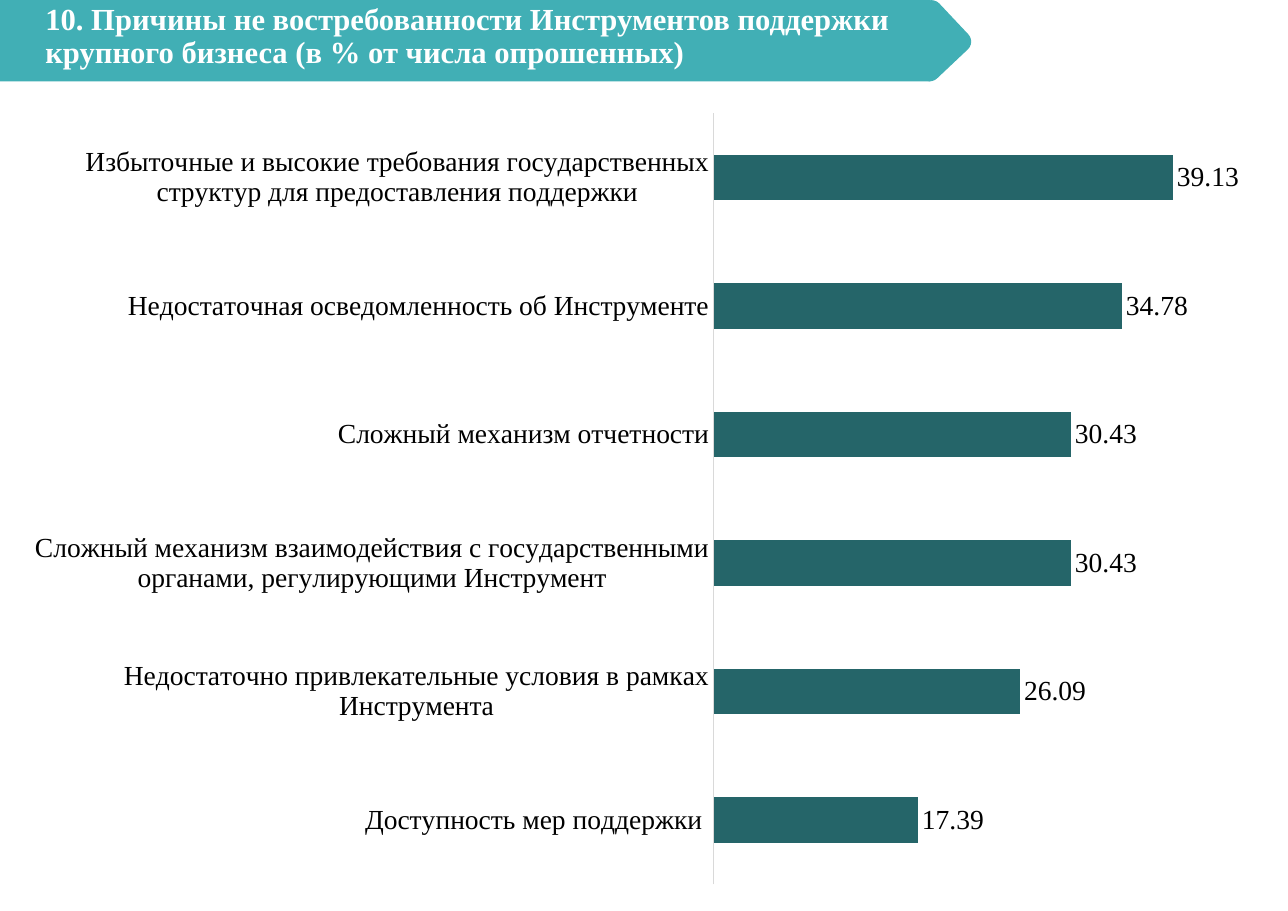
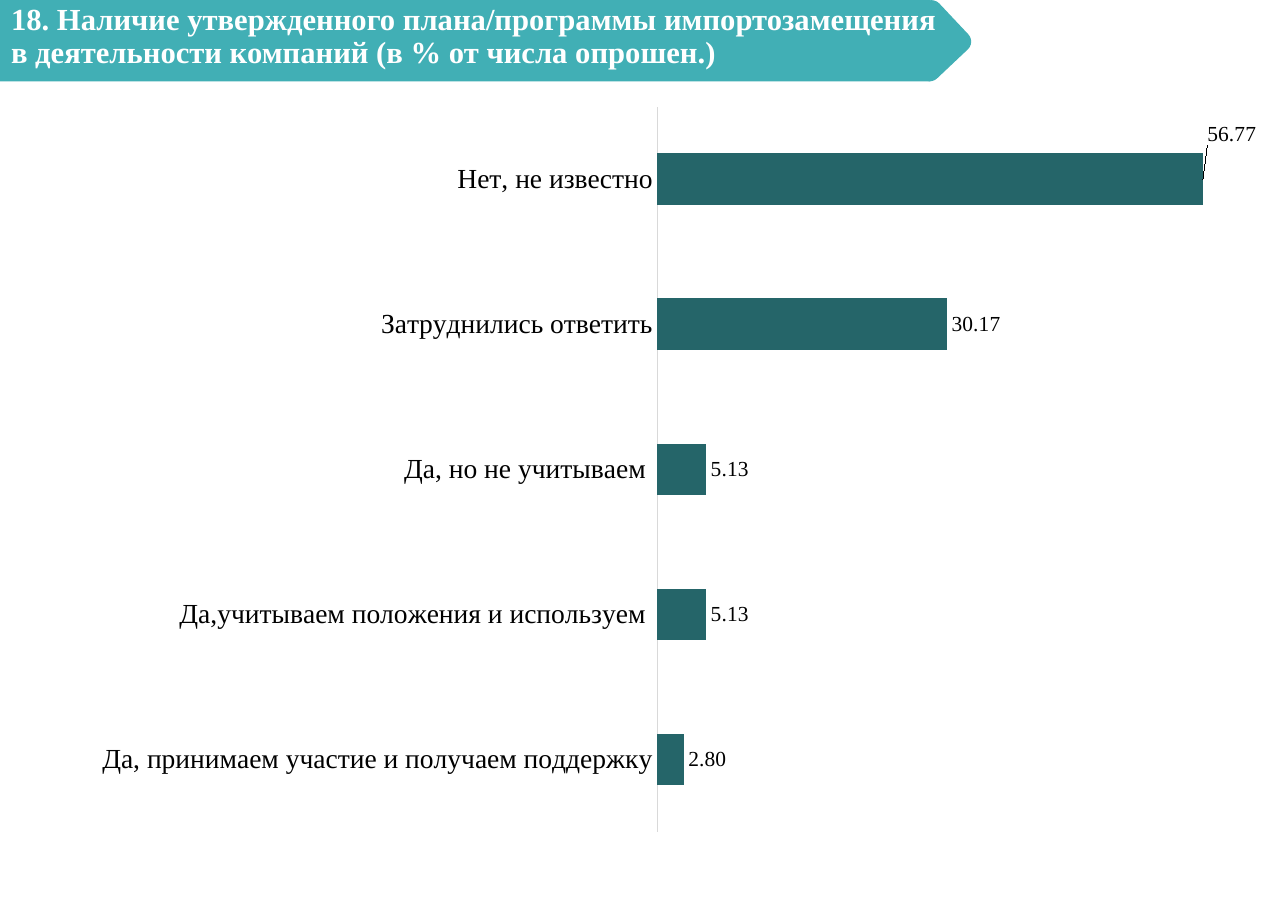
from lxml.etree import SubElement
from pptx import Presentation
from pptx.chart.data import CategoryChartData
from pptx.dml.color import RGBColor
from pptx.enum.chart import XL_CHART_TYPE, XL_LABEL_POSITION, XL_TICK_MARK
from pptx.enum.shapes import MSO_SHAPE
from pptx.enum.text import MSO_ANCHOR, MSO_AUTO_SIZE, PP_ALIGN
from pptx.oxml import parse_xml
from pptx.oxml.ns import nsdecls, qn
from pptx.util import Cm, Pt

BANNER_COLOR = "41AFB5"
BAR_COLOR = "256569"
AXIS_COLOR = "D9D9D9"
TEXT_COLOR = "000000"
TITLE_COLOR = "FFFFFF"
FONT_NAME = "Times New Roman"
PLOT_MARGIN = 0.02

TITLE_FRAME = {"word_wrap": True, "auto_size": MSO_AUTO_SIZE.NONE, "vertical_anchor": MSO_ANCHOR.MIDDLE}
TITLE_PARAGRAPH = {"alignment": PP_ALIGN.LEFT, "line_spacing": 0.9}
CATEGORY_AXIS = {
    "major_tick_mark": XL_TICK_MARK.NONE,
    "minor_tick_mark": XL_TICK_MARK.NONE,
    "has_major_gridlines": False,
}
VALUE_AXIS = {"visible": False, "has_major_gridlines": False, "minimum_scale": 0}
DATA_LABELS = {
    "show_value": True,
    "position": XL_LABEL_POSITION.OUTSIDE_END,
    "number_format": "0.00",
    "number_format_is_linked": False,
}

SURVEY_SLIDES = [
    {
        "title": ["10. Причины не востребованности Инструментов поддержки крупного бизнеса (в % от числа опрошенных)"],
        "title_box": (0.79, 0, 21.46, 1.73),
        "chart_box": (0.23, 2.24, 28.98, 18.52),
        "plot_left": 0.56,
        "maximum": 45,
        "label_size": 18,
        "label_shifts": {},
        "answers": {
            "Доступность мер поддержки ": 17.39,
            "Недостаточно привлекательные условия в рамках Инструмента": 26.09,
            "Сложный механизм взаимодействия с государственными органами, регулирующими Инструмент": 30.43,
            "Сложный механизм отчетности": 30.43,
            "Недостаточная осведомленность об Инструменте": 34.78,
            "Избыточные и высокие требования государственных структур для предоставления поддержки": 39.13,
        },
    },
    {
        "title": [
            "18. Наличие утвержденного плана/программы импортозамещения",
            "в деятельности компаний (в % от числа опрошен.)",
        ],
        "title_box": (0, 0, 25.65, 1.73),
        "chart_box": (1.85, 2.11, 27.15, 17.42),
        "plot_left": 0.49,
        "maximum": 60,
        "label_size": 14,
        "label_shifts": {4: -0.06},
        "answers": {
            "Да, принимаем участие и получаем поддержку": 2.8,
            "Да,учитываем положения и используем ": 5.13,
            "Да, но не учитываем ": 5.13,
            "Затруднились ответить": 30.17,
            "Нет, не известно": 56.77,
        },
    },
]


def color(hex_string):
    return RGBColor.from_string(hex_string)


def apply_format(target, values):
    for name, value in values.items():
        setattr(target, name, value)


def format_font(font, size, hex_string=TEXT_COLOR, bold=False):
    apply_format(font, {"name": FONT_NAME, "size": Pt(size), "bold": bold})
    font.color.rgb = color(hex_string)


def add_banner(slide, layout, box):
    left, top, width, height = box
    tip_side = height * 0.78
    tip_left = left + width - tip_side / 2
    tip_top = top + (height - tip_side) / 2
    group = slide.shapes.add_group_shape()
    parts = [
        (MSO_SHAPE.RECTANGLE, box, 0),
        (MSO_SHAPE.ROUNDED_RECTANGLE, (tip_left, tip_top, tip_side, tip_side), 46.7),
    ]
    for preset, part_box, rotation in parts:
        shape = group.shapes.add_shape(preset, *map(Cm, part_box))
        shape.rotation = rotation
        shape.shadow.inherit = False
        shape.fill.solid()
        shape.fill.fore_color.rgb = color(BANNER_COLOR)
        shape.line.fill.background()
    for number, properties in enumerate(group.element.iter(qn("p:cNvPr")), 101):
        properties.set("id", str(number))
    layout.placeholders[0].element.getparent().insert(2, group.element)


def place_title(slide, lines, box):
    title = slide.shapes.title
    apply_format(title, dict(zip(("left", "top", "width", "height"), map(Cm, box))))
    apply_format(title.text_frame, TITLE_FRAME)
    paragraph = title.text_frame.paragraphs[0]
    apply_format(paragraph, TITLE_PARAGRAPH)
    for index, line in enumerate(lines):
        if index:
            paragraph.add_line_break()
        run = paragraph.add_run()
        run.text = line
        format_font(run.font, 20, TITLE_COLOR, True)


def set_plot_layout(chart, plot_left):
    plot_area = chart.element.find(".//" + qn("c:plotArea"))
    for old_layout in plot_area.findall(qn("c:layout")):
        plot_area.remove(old_layout)
    layout = parse_xml(f"<c:layout {nsdecls('c')}><c:manualLayout/></c:layout>")
    values = {
        "layoutTarget": "inner",
        "xMode": "edge",
        "yMode": "edge",
        "x": plot_left,
        "y": PLOT_MARGIN,
        "w": round(1 - PLOT_MARGIN - plot_left, 2),
        "h": 1 - 2 * PLOT_MARGIN,
    }
    for name, value in values.items():
        SubElement(layout[0], qn(f"c:{name}")).set("val", str(value))
    plot_area.insert(0, layout)


def shift_label(chart, series, index, vertical_shift, size):
    label = series.points[index].data_label
    label.position = XL_LABEL_POSITION.OUTSIDE_END
    format_font(label.font, size)
    label_element = chart.element.find(".//" + qn("c:dLbl") + f"/{qn('c:idx')}[@val='{index}']").getparent()
    label_element.insert(1, parse_xml(
        f"<c:layout {nsdecls('c')}><c:manualLayout>"
        f'<c:x val="0"/><c:y val="{vertical_shift}"/>'
        "</c:manualLayout></c:layout>"
    ))


def add_answer_chart(slide, survey):
    answers = survey["answers"]
    size = survey["label_size"]
    chart_data = CategoryChartData(number_format="0.00")
    chart_data.categories = list(answers)
    chart_data.add_series("Series 1", list(answers.values()))
    frame = slide.shapes.add_chart(XL_CHART_TYPE.BAR_CLUSTERED, *map(Cm, survey["chart_box"]), chart_data)
    chart = frame.chart
    apply_format(chart, {"has_title": False, "has_legend": False})
    format_font(chart.font, size)
    set_plot_layout(chart, survey["plot_left"])

    apply_format(chart.category_axis, CATEGORY_AXIS)
    format_font(chart.category_axis.tick_labels.font, 18)
    axis_line = chart.category_axis.format.line
    axis_line.color.rgb = color(AXIS_COLOR)
    axis_line.width = Pt(0.75)
    apply_format(chart.value_axis, VALUE_AXIS | {"maximum_scale": survey["maximum"]})

    plot = chart.plots[0]
    apply_format(plot, {"gap_width": 182, "vary_by_categories": False})
    series = plot.series[0]
    series.format.fill.solid()
    series.format.fill.fore_color.rgb = color(BAR_COLOR)
    apply_format(series.data_labels, DATA_LABELS)
    format_font(series.data_labels.font, size)
    for index, vertical_shift in survey["label_shifts"].items():
        shift_label(chart, series, index, vertical_shift, size)


def main():
    presentation = Presentation()
    apply_format(presentation, {"slide_width": Cm(29.7), "slide_height": Cm(21)})
    layout = presentation.slide_layouts[5]
    for index, survey in enumerate(SURVEY_SLIDES):
        slide = presentation.slides.add_slide(layout)
        if index == 0:
            add_banner(slide, layout, (0, 0, 21.46, 1.88))
        place_title(slide, survey["title"], survey["title_box"])
        add_answer_chart(slide, survey)
    presentation.save("out.pptx")


if __name__ == "__main__":
    main()
